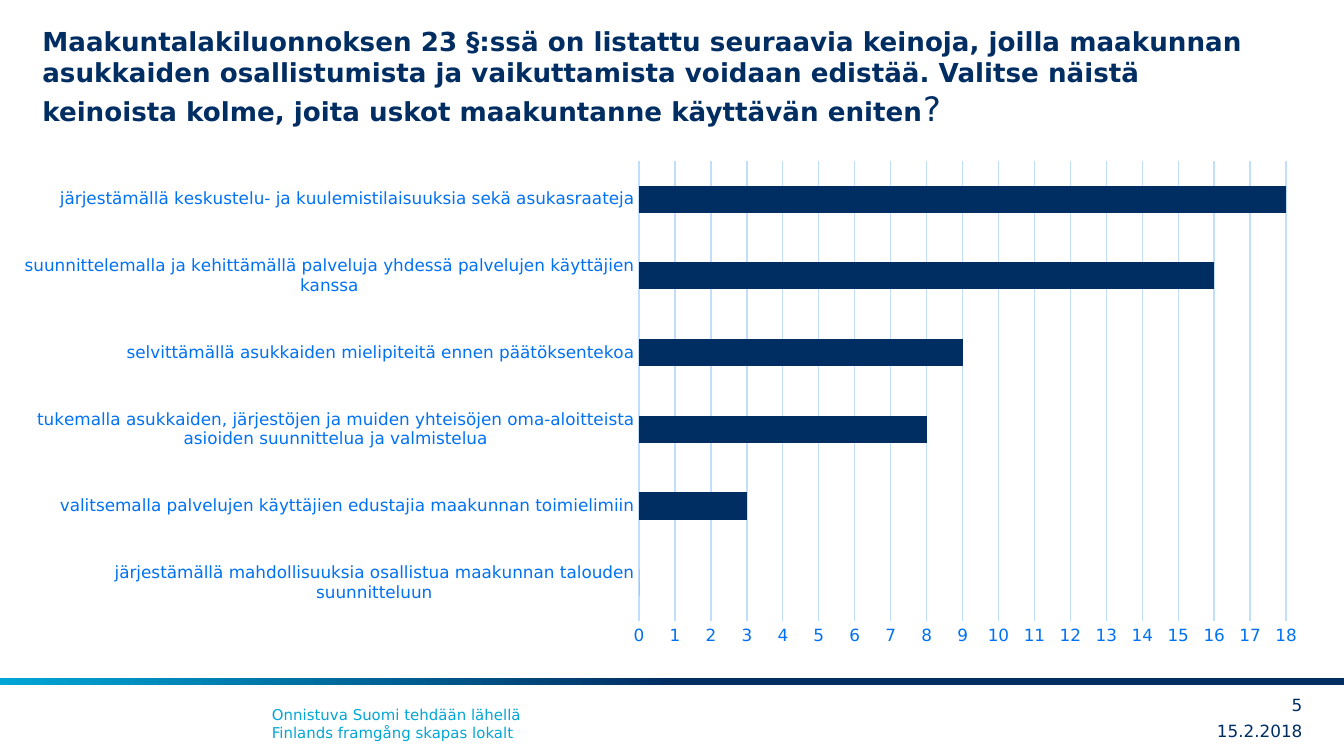
from lxml import etree
from pptx import Presentation
from pptx.chart.data import CategoryChartData
from pptx.dml.color import RGBColor
from pptx.enum.chart import XL_CHART_TYPE as CT, XL_TICK_MARK as TM
from pptx.enum.shapes import MSO_SHAPE as SHAPE
from pptx.enum.text import MSO_ANCHOR as ANCHOR, MSO_AUTO_SIZE as FIT, PP_ALIGN as ALIGN
from pptx.oxml.ns import qn
from pptx.util import Emu, Pt

PX = 4572
FONT = "DejaVu Sans"
COLORS = {"navy": "002E63", "cyan": "00A6D6", "blue": "0071F3", "pale": "C1DEFF"}
TITLE = (
    "Maakuntalakiluonnoksen 23 §:ssä on listattu seuraavia keinoja, joilla maakunnan "
    "asukkaiden osallistumista ja vaikuttamista voidaan edistää. Valitse näistä "
    "keinoista kolme, joita uskot maakuntanne käyttävän eniten"
)
ANSWERS = {
    "järjestämällä mahdollisuuksia osallistua maakunnan talouden suunnitteluun": 0,
    "valitsemalla palvelujen käyttäjien edustajia maakunnan toimielimiin": 3,
    "tukemalla asukkaiden, järjestöjen ja muiden yhteisöjen oma-aloitteista "
    "asioiden suunnittelua ja valmistelua": 8,
    "selvittämällä asukkaiden mielipiteitä ennen päätöksentekoa": 9,
    "suunnittelemalla ja kehittämällä palveluja yhdessä palvelujen käyttäjien kanssa": 16,
    "järjestämällä keskustelu- ja kuulemistilaisuuksia sekä asukasraateja": 18,
}


class Deck:
    """Holds the style and the current slide, with a method per kind of element."""

    def __init__(self, width, height):
        self.prs = Presentation()
        self.prs.slide_width, self.prs.slide_height = self.box(width, height)
        self.s = self.prs.slides.add_slide(self.prs.slide_layouts[5])

    def box(self, *px):
        return [Emu(n * PX) for n in px]

    def color(self, name):
        return RGBColor.from_string(COLORS[name])

    def font(self, font, size, color, bold=False):
        font.name, font.size, font.bold = FONT, Pt(size), bold
        font.color.rgb = self.color(color)

    def run(self, p, text, size, color, bold=False):
        r = p.add_run()
        r.text = text
        self.font(r.font, size, color, bold)

    def title(self, at, runs):
        sp = self.s.shapes.title
        sp.left, sp.top, sp.width, sp.height = self.box(*at)
        tf = sp.text_frame
        tf.word_wrap, tf.auto_size, tf.vertical_anchor = True, FIT.NONE, ANCHOR.TOP
        p = tf.paragraphs[0]
        p.alignment = ALIGN.LEFT
        for text, size, bold in runs:
            self.run(p, text, size, "navy", bold)

    def text(self, at, lines, size, color):
        tf = self.s.shapes.add_textbox(*self.box(*at)).text_frame
        tf.word_wrap = True
        p = tf.paragraphs[0]
        for i, line in enumerate(lines):
            if i:
                p.add_line_break()
            self.run(p, line, size, color)
        return tf

    def label(self, at, text):
        tf = self.text(at, [text], 9, "navy")
        tf.margin_left = tf.margin_top = tf.margin_right = tf.margin_bottom = 0
        tf.vertical_anchor = ANCHOR.MIDDLE
        tf.paragraphs[0].alignment = ALIGN.RIGHT

    def band(self, at, stops, angle):
        sp = self.s.shapes.add_shape(SHAPE.RECTANGLE, *self.box(*at))
        sp.shadow.inherit = False
        sp.line.fill.background()
        sp.fill.gradient()
        sp.fill.gradient_angle = angle
        for stop, (position, color) in zip(sp.fill.gradient_stops, stops):
            stop.position, stop.color.rgb = position, self.color(color)

    def grid_line(self, line):
        line.color.rgb, line.width = self.color("pale"), Pt(0.75)

    def bar_chart(self, at, values, plot_at):
        data = CategoryChartData(number_format="0")
        data.categories = list(values)
        data.add_series("Series 1", list(values.values()))
        chart = self.s.shapes.add_chart(CT.BAR_CLUSTERED, *self.box(*at), data).chart
        chart.has_title = chart.has_legend = False
        self.font(chart.font, 10, "navy")
        plot = chart.plots[0]
        plot.gap_width, plot.vary_by_categories = 182, False
        fill = plot.series[0].format.fill
        fill.solid()
        fill.fore_color.rgb = self.color("navy")
        cat, val = chart.category_axis, chart.value_axis
        for axis in (cat, val):
            axis.major_tick_mark = axis.minor_tick_mark = TM.NONE
            self.font(axis.tick_labels.font, 9, "blue")
        self.grid_line(cat.format.line)
        val.format.line.fill.background()
        val.minimum_scale, val.maximum_scale, val.major_unit = 0, 18, 1
        val.tick_labels.number_format = "0"
        val.tick_labels.number_format_is_linked = False
        val.has_major_gridlines = True
        self.grid_line(val.major_gridlines.format.line)
        self.place_plot(chart, plot_at)

    def place_plot(self, chart, at):
        area = chart.element.find(".//" + qn("c:plotArea"))
        for old in area.findall(qn("c:layout")):
            area.remove(old)
        layout = etree.Element(qn("c:layout"))
        area.insert(0, layout)
        manual = etree.SubElement(layout, qn("c:manualLayout"))
        settings = [("layoutTarget", "inner"), ("xMode", "edge"), ("yMode", "edge")]
        for tag, value in settings + list(zip("xywh", at)):
            etree.SubElement(manual, qn("c:" + tag)).set("val", str(value))


def main():
    deck = Deck(2000, 1125)
    deck.band((0, 1009, 2000, 10), [(0.5, "navy"), (1, "cyan")], 180)
    footer = ["Onnistuva Suomi tehdään lähellä", "Finlands framgång skapas lokalt"]
    deck.text((385, 1040, 1308, 74), footer, 8, "cyan")
    deck.label((1740, 1066, 198, 44), "15.2.2018")
    deck.label((1852, 1027, 86, 44), "5")
    deck.bar_chart((0, 0, 1961, 989), ANSWERS, (0.485, 0.242, 0.491, 0.693))
    deck.title((43, 27, 1874, 176), [(TITLE, 14, True), ("?", 18, False)])
    deck.prs.save("out.pptx")


if __name__ == "__main__":
    main()
